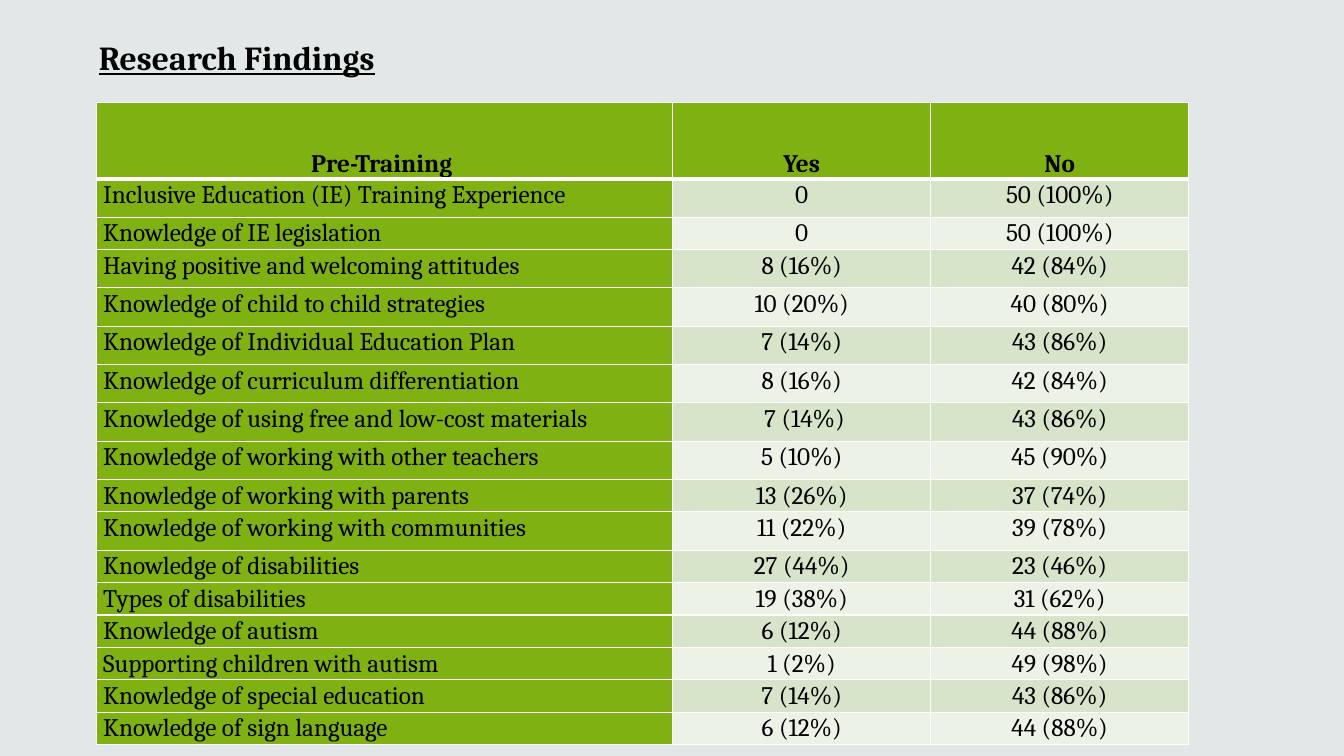
from lxml import etree
from pptx import Presentation
from pptx.dml.color import RGBColor
from pptx.enum.text import MSO_ANCHOR, MSO_AUTO_SIZE, PP_ALIGN
from pptx.oxml.ns import qn
from pptx.util import Pt

LEFT, CENTER = PP_ALIGN.LEFT, PP_ALIGN.CENTER
TOP, BOTTOM = MSO_ANCHOR.TOP, MSO_ANCHOR.BOTTOM
FIT_SHAPE = MSO_AUTO_SIZE.SHAPE_TO_FIT_TEXT

TITLE = "Research Findings"
HEADER = ("Pre-Training ", "Yes", "No")
FINDINGS = [
    ("Inclusive Education (IE) Training Experience", "0", "50 (100%)"),
    ("Knowledge of IE legislation", "0", "50 (100%)"),
    ("Having positive and welcoming attitudes", "8 (16%)", "42 (84%)"),
    ("Knowledge of child to child strategies", "10 (20%)", "40 (80%)"),
    ("Knowledge of Individual Education Plan", "7 (14%)", "43 (86%)"),
    ("Knowledge of curriculum differentiation", "8 (16%)", "42 (84%)"),
    ("Knowledge of using free and low-cost materials", " 7 (14%)", "43 (86%)"),
    ("Knowledge of working with other teachers", "5 (10%)", "45 (90%)"),
    ("Knowledge of working with parents", "13 (26%)", "37 (74%)"),
    ("Knowledge of working with communities", "11 (22%)", "39 (78%)"),
    ("Knowledge of disabilities", "27 (44%)", "23 (46%)"),
    ("Types of disabilities", "19 (38%)", "31 (62%)"),
    ("Knowledge of autism", "6 (12%)", "44 (88%)"),
    ("Supporting children with autism", "1 (2%)", "49 (98%)"),
    ("Knowledge of special education", "7 (14%)", "43 (86%)"),
    ("Knowledge of sign language", "6 (12%)", "44 (88%)"),
]
TALL_ROWS = {1, 3, 4, 5, 6, 7, 8, 10}
HEADER_H, TALL_H, SHORT_H = 54.6, 27.4, 23.1
COL_WIDTHS = (411.8, 184.3, 184.3)
TABLE_LEFT, TABLE_TOP = 68.7, 73.1

FONT = "Cambria"
COLORS = {
    "background": "E2E8E8",
    "text": "000000",
    "green": "80B113",
    "odd": "D7E4CA",
    "even": "ECF2E6",
    "border": "FFFFFF",
}


def rgb(name):
    return RGBColor.from_string(COLORS[name])


def set_font(p, size, bold):
    p.font.name, p.font.size, p.font.bold = FONT, Pt(size), bold
    p.font.color.rgb = rgb("text")


def set_borders(cell, top, bottom):
    """Draw all four borders; top and bottom are widths in points."""
    props = cell._tc.get_or_add_tcPr()
    widths = (("lnL", 1), ("lnR", 1), ("lnT", top), ("lnB", bottom))
    for i, (tag, width) in enumerate(widths):
        ln = etree.Element(qn(f"a:{tag}"), w=str(Pt(width)))
        fill = etree.SubElement(ln, qn("a:solidFill"))
        etree.SubElement(fill, qn("a:srgbClr"), val=COLORS["border"])
        props.insert(i, ln)


def fill_cell(cell, text, row, col):
    header = row == 0
    cell.margin_left = cell.margin_right = Pt(5)
    cell.margin_top = cell.margin_bottom = 0
    cell.vertical_anchor = BOTTOM if header else TOP
    band = "green" if header or col == 0 else ("even", "odd")[row % 2]
    cell.fill.solid()
    cell.fill.fore_color.rgb = rgb(band)
    set_borders(cell, 3 if row == 1 else 1, 3 if header else 1)
    cell.text = text
    p = cell.text_frame.paragraphs[0]
    p.alignment = CENTER if header or col else LEFT
    p.line_spacing = 1.07
    set_font(p, 18, header)


def add_findings_table(slide):
    rows = [HEADER, *FINDINGS]
    heights = [HEADER_H] + [TALL_H if i in TALL_ROWS else SHORT_H
                            for i in range(1, len(rows))]
    frame = slide.shapes.add_table(
        len(rows), len(HEADER), Pt(TABLE_LEFT), Pt(TABLE_TOP),
        Pt(sum(COL_WIDTHS)), Pt(sum(heights)))
    table = frame.table
    table.first_col = True
    for column, width in zip(table.columns, COL_WIDTHS):
        column.width = Pt(width)
    for r, (values, height) in enumerate(zip(rows, heights)):
        table.rows[r].height = Pt(height)
        for c, text in enumerate(values):
            fill_cell(table.cell(r, c), text, r, c)


def add_title(slide):
    title = slide.shapes.title
    title.left, title.top = Pt(63.4), Pt(23)
    title.width, title.height = Pt(395.3), Pt(36.4)
    tf = title.text_frame
    tf.text = TITLE
    tf.word_wrap = True
    tf.auto_size = FIT_SHAPE
    tf.vertical_anchor = TOP
    p = tf.paragraphs[0]
    p.alignment = LEFT
    set_font(p, 24, True)
    p.font.underline = True


def main():
    prs = Presentation()
    prs.slide_width, prs.slide_height = Pt(960), Pt(540)
    slide = prs.slides.add_slide(prs.slide_layouts[5])
    slide.background.fill.solid()
    slide.background.fill.fore_color.rgb = rgb("background")
    add_title(slide)
    add_findings_table(slide)
    prs.save("out.pptx")


if __name__ == "__main__":
    main()
